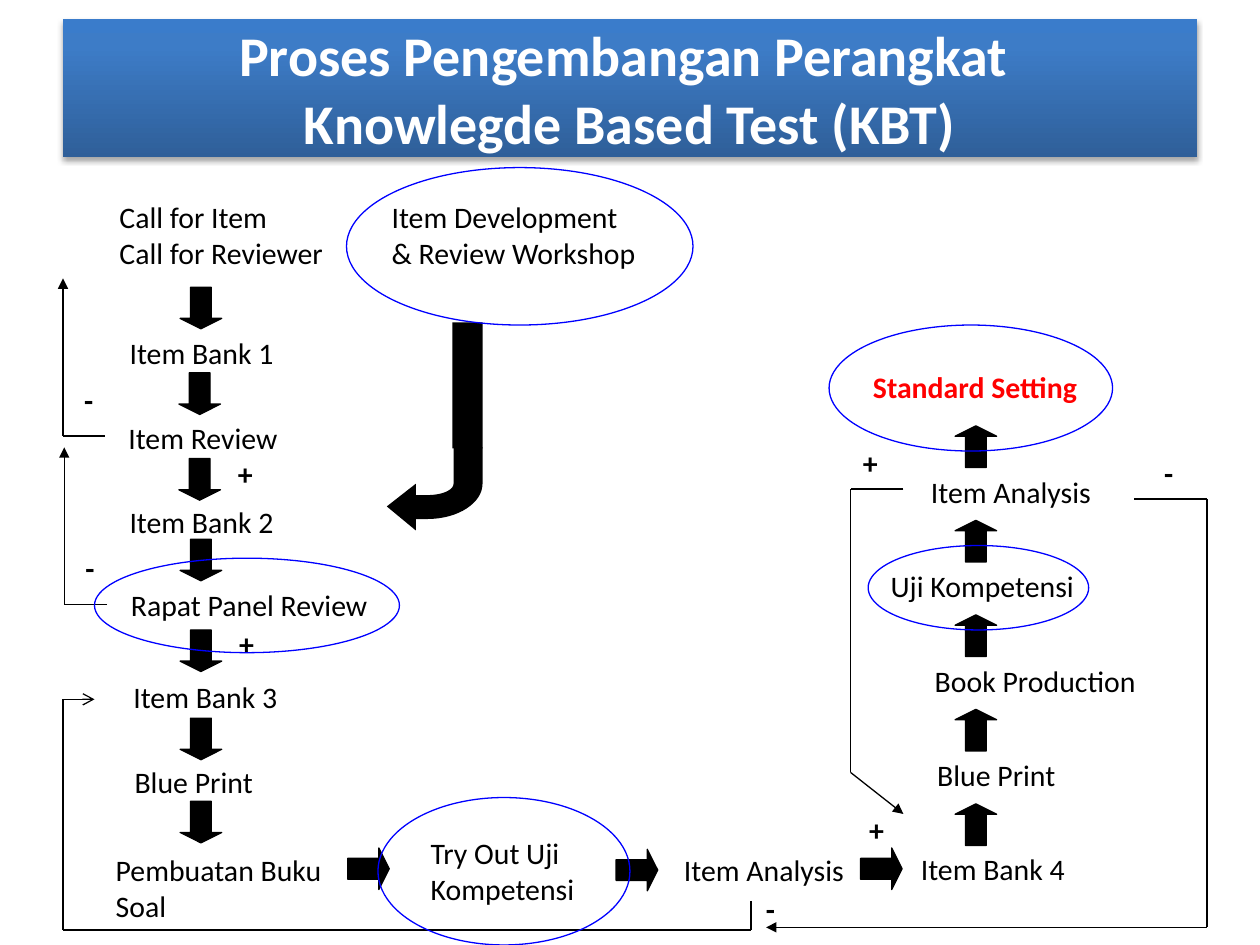
import lxml.etree
import pptx
import pptx.dml.color
import pptx.enum.shapes
import pptx.enum.text
import pptx.oxml
import pptx.oxml.ns
import pptx.util

Inches = pptx.util.Inches
Pt = pptx.util.Pt
SHAPES = pptx.enum.shapes.MSO_SHAPE
qn = pptx.oxml.ns.qn
NAMESPACE = pptx.oxml.ns.nsdecls("a")


def color(hex_string):
    return pptx.dml.color.RGBColor.from_string(hex_string)


def write(shape, text, size=17, font_color="000000", bold=False, wrap=False, align="LEFT", anchor="TOP"):
    frame = shape.text_frame
    frame.word_wrap = wrap
    frame.vertical_anchor = getattr(pptx.enum.text.MSO_ANCHOR, anchor)
    frame.text = text
    for paragraph in frame.paragraphs:
        paragraph.alignment = getattr(pptx.enum.text.PP_ALIGN, align)
        for run in paragraph.runs:
            run.font.name = "Calibri"
            run.font.size = Pt(size)
            run.font.bold = bold
            run.font.color.rgb = color(font_color)


presentation = pptx.Presentation()
presentation.slide_width = Inches(10)
presentation.slide_height = Inches(7.5)
slide = presentation.slides.add_slide(presentation.slide_layouts[6])
shapes = slide.shapes

title = shapes.add_shape(SHAPES.RECTANGLE, Inches(0.5), Inches(0.15), Inches(9), Inches(1.1))
title.line.fill.background()
write(title, "Proses Pengembangan Perangkat \vKnowlegde Based Test (KBT)",
      size=32, font_color="FFFFFF", bold=True, wrap=True, align="CENTER", anchor="MIDDLE")
properties = title._element.spPr
gradient = pptx.oxml.parse_xml(
    f'<a:gradFill {NAMESPACE} rotWithShape="1"><a:gsLst>'
    '<a:gs pos="0"><a:srgbClr val="2F5F99"/></a:gs>'
    '<a:gs pos="80000"><a:srgbClr val="3D7CC7"/></a:gs>'
    '<a:gs pos="100000"><a:srgbClr val="3A7CCB"/></a:gs>'
    '</a:gsLst><a:lin ang="16200000" scaled="0"/></a:gradFill>')
properties.find(qn("a:prstGeom")).addnext(gradient)
properties.append(pptx.oxml.parse_xml(
    f'<a:effectLst {NAMESPACE}><a:outerShdw blurRad="39370" dist="22860" dir="5400000" rotWithShape="0">'
    '<a:srgbClr val="000000"><a:alpha val="35000"/></a:srgbClr></a:outerShdw></a:effectLst>'))

labels = [
    ("Call for Item\nCall for Reviewer", 0.85, 1.53, 1.84, 0.67, {}),
    ("Item Development\n& Review Workshop", 3.01, 1.53, 2.17, 0.67, {}),
    ("Item Bank 1", 0.93, 2.61, 1.58, 0.4, {"wrap": True}),
    ("Item Review", 0.92, 3.28, 1.41, 0.39, {}),
    ("Item Bank 2", 0.93, 3.95, 1.36, 0.39, {}),
    ("Rapat Panel Review", 0.94, 4.61, 2.11, 0.39, {}),
    ("Item Bank 3", 0.96, 5.34, 1.36, 0.39, {}),
    ("Blue Print", 0.97, 6.01, 1.16, 0.39, {}),
    ("Pembuatan Buku\nSoal", 0.82, 6.71, 1.86, 0.67, {}),
    ("Try Out Uji Kompetensi", 3.32, 6.58, 1.85, 0.67, {"wrap": True}),
    ("Item Analysis", 5.33, 6.71, 1.52, 0.39, {"wrap": True}),
    ("Item Bank 4", 7.21, 6.7, 1.37, 0.39, {}),
    ("Blue Print", 7.34, 5.96, 1.16, 0.39, {}),
    ("Book Production", 7.32, 5.21, 1.81, 0.39, {}),
    ("Uji Kompetensi", 6.97, 4.46, 1.68, 0.39, {}),
    ("Item Analysis", 7.29, 3.71, 1.49, 0.39, {}),
    ("Standard Setting", 6.83, 2.88, 1.84, 0.39, {"font_color": "FF0000", "bold": True}),
]
signs = [
    ("-", 0.57, 2.98), ("-", 0.58, 4.31), ("-", 5.98, 7.02), ("-", 9.14, 3.56),
    ("+", 1.79, 3.57), ("+", 1.8, 4.92), ("+", 6.8, 6.39), ("+", 6.75, 3.48),
]
sign_widths = {"-": 0.27, "+": 0.32}
labels += [(sign, left, top, sign_widths[sign], 0.39, {"bold": True}) for sign, left, top in signs]
for text, left, top, width, height, text_format in labels:
    label = shapes.add_textbox(Inches(left), Inches(top), Inches(width), Inches(height))
    write(label, text, **text_format)

down_arrows = [(1.43, 2.28), (1.42, 2.96), (1.42, 3.64), (1.43, 4.28), (1.43, 5), (1.43, 5.7), (1.43, 6.36)]
right_arrows = [(2.76, 6.73), (4.89, 6.74), (6.83, 6.73)]
up_arrows = [(7.58, 3.38 + 0.75 * step) for step in range(5)]
for rotation, positions in ((0, down_arrows), (270, right_arrows), (180, up_arrows)):
    for left, top in positions:
        arrow = shapes.add_shape(SHAPES.DOWN_ARROW, Inches(left), Inches(top), Inches(0.33), Inches(0.33))
        arrow.adjustments[0] = 0.5
        arrow.adjustments[1] = 0.25
        arrow.rotation = rotation
        arrow.shadow.inherit = False
        arrow.fill.solid()
        arrow.fill.fore_color.rgb = color("000000")
        arrow.line.color.rgb = color("000000")
        arrow.line.width = Pt(0.75)

routes = [
    ([(0.83, 3.46), (0.5, 3.46), (0.5, 2.21)], "triangle"),
    ([(0.85, 4.8), (0.51, 4.8), (0.51, 3.55)], "triangle"),
    ([(5.96, 7.15), (5.96, 7.38), (0.5, 7.38), (0.5, 5.55), (0.75, 5.55)], "arrow"),
    ([(9, 3.96), (9.58, 3.96), (9.58, 7.36), (6.08, 7.36)], "triangle"),
    ([(7.17, 3.88), (6.75, 3.88), (6.75, 6.13), (7.17, 6.46)], "triangle"),
]
for points, arrowhead in routes:
    for start, end in zip(points, points[1:]):
        connector = shapes.add_connector(pptx.enum.shapes.MSO_CONNECTOR.STRAIGHT,
                                         *map(Inches, start + end))
        connector.line.color.rgb = color("000000")
        connector.line.width = Pt(0.75)
        lxml.etree.SubElement(connector._element.spPr, qn("a:effectLst"))
    lxml.etree.SubElement(connector.get_or_add_ln(), qn("a:tailEnd"), type=arrowhead)

outer_curve = [(3.39, 4.12), (3.64, 4.12), (3.83, 3.99), (3.83, 3.84)]
inner_curve = [(3.6, 3.84), (3.6, 3.89), (3.51, 3.93), (3.39, 3.93)]
curves = []
for controls in (outer_curve, inner_curve):
    curve = []
    for step in range(17):
        t = step / 16
        weights = ((1 - t) ** 3, 3 * t * (1 - t) ** 2, 3 * t ** 2 * (1 - t), t ** 3)
        curve.append(tuple(sum(weight * point[axis] for weight, point in zip(weights, controls))
                           for axis in (0, 1)))
    curves.append(curve)
outline = [(3.07, 4.02), (3.3, 4.21), (3.3, 4.12), *curves[0], (3.83, 3.55), (3.6, 3.55),
           *curves[1], (3.3, 3.93), (3.3, 3.84)]
vertices = [(Inches(x), Inches(y)) for x, y in outline]
builder = shapes.build_freeform(*vertices[0])
builder.add_line_segments(vertices[1:], close=True)
bent_arrow = builder.convert_to_shape()
arrow_stem = shapes.add_shape(SHAPES.RECTANGLE, Inches(3.59), Inches(2.56), Inches(0.24), Inches(1))
for shape in (bent_arrow, arrow_stem):
    shape.shadow.inherit = False
    shape.fill.solid()
    shape.fill.fore_color.rgb = color("000000")
    shape.line.fill.background()

ellipses = [
    (3, 6.33, 2, 1.17), (6.89, 4.33, 1.75, 0.67), (2.75, 1.33, 2.75, 1.25),
    (6.58, 2.58, 2.25, 1), (0.75, 4.43, 2.42, 0.75),
]
for bounds in ellipses:
    ellipse = shapes.add_shape(SHAPES.OVAL, *map(Inches, bounds))
    ellipse.shadow.inherit = False
    ellipse.fill.background()
    ellipse.line.color.rgb = color("0000FF")
    ellipse.line.width = Pt(0.75)

presentation.save("out.pptx")
